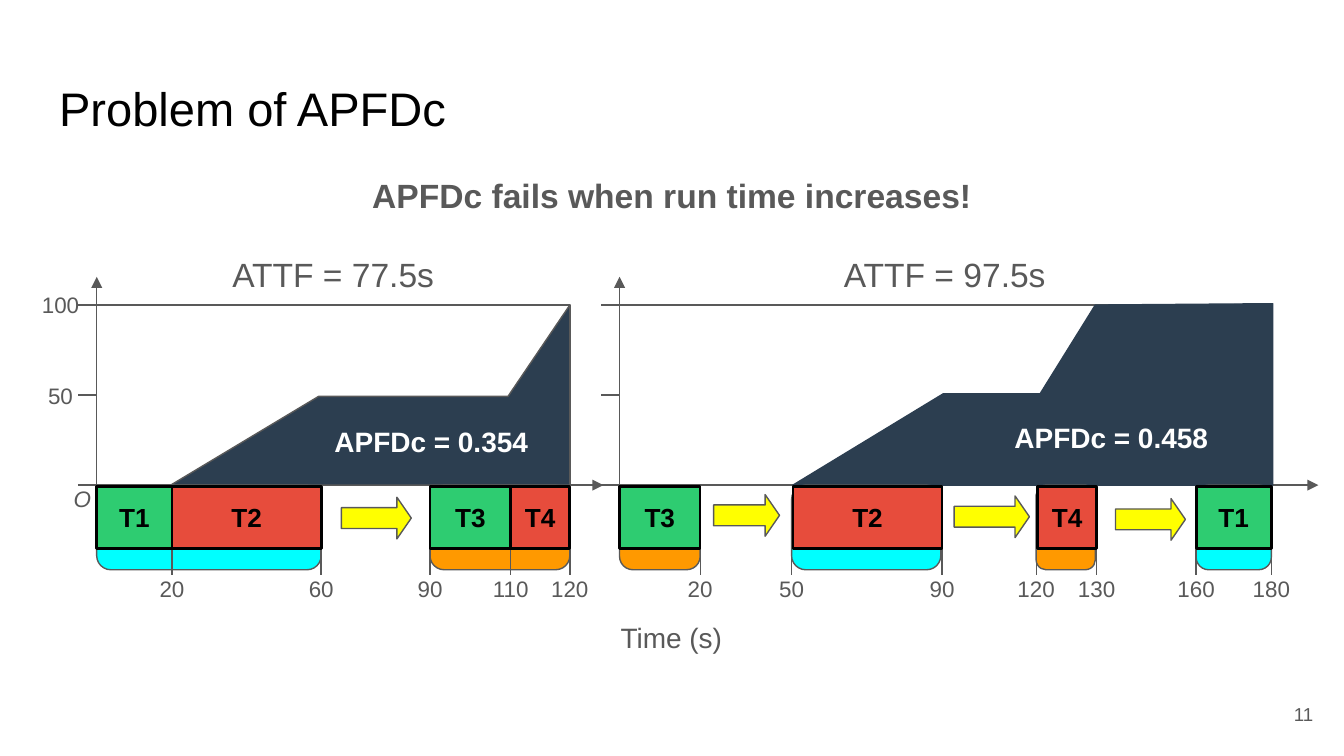
from dataclasses import dataclass

from lxml.etree import SubElement
from pptx import Presentation
from pptx.dml.color import RGBColor
from pptx.enum.shapes import MSO_CONNECTOR as Connector, MSO_SHAPE as Preset
from pptx.enum.text import MSO_ANCHOR as Anchor, MSO_AUTO_SIZE as AutoSize, PP_ALIGN as Align
from pptx.oxml.ns import qn
from pptx.util import Emu, Pt

SCALE = 9144


@dataclass(frozen=True)
class Theme:
    """Colours, type sizes and line widths of the slide."""
    font: str = "Arial"
    ink: str = "000000"
    grey: str = "595959"
    white: str = "FFFFFF"
    green: str = "2ECC71"
    red: str = "E74C3C"
    cyan: str = "00FFFF"
    orange: str = "FF9900"
    yellow: str = "FFFF00"
    navy: str = "2C3E50"
    title: float = 25.2
    heading: float = 18
    caption: float = 15
    test: float = 14
    tick: float = 12
    number: float = 10
    thin: float = 0.75
    thick: float = 1.5


THEME = Theme()
TEST_STYLES = {
    "T1": (56, THEME.green),
    "T2": (111, THEME.red),
    "T3": (60, THEME.green),
    "T4": (44, THEME.red),
}


@dataclass(frozen=True)
class Run:
    """One test order, with lengths measured from the origin of its plot."""
    attf: str
    apfdc: str
    apfdc_at: tuple
    axis_overrun: int
    tests: tuple
    faults: tuple
    ticks: tuple
    pauses: tuple
    area: tuple
    area_line: str


SHORT_RUN = Run(
    attf="ATTF = 77.5s", apfdc="APFDc = 0.354", apfdc_at=(167, 79), axis_overrun=25,
    tests=(("T1", 0), ("T2", 56), ("T3", 248), ("T4", 308)),
    faults=((0, 167, THEME.cyan), (248, 104, THEME.orange)),
    ticks=((56, "20"), (167, "60"), (248, "90"), (308, "110"), (352, "120")),
    pauses=((182, 9, 52),),
    area=((55, 0), (165, -66), (306, -66), (352, -134), (352, 0)),
    area_line=THEME.grey,
)
LONG_RUN = Run(
    attf="ATTF = 97.5s", apfdc="APFDc = 0.458", apfdc_at=(284, 76), axis_overrun=35,
    tests=(("T3", 0), ("T2", 129), ("T4", 311), ("T1", 429)),
    faults=((0, 60, THEME.orange), (128, 111, THEME.cyan),
            (310, 44, THEME.orange), (429, 56, THEME.cyan)),
    ticks=((60, "20"), (128, "50"), (240, "90"), (310, "120"),
           (355, "130"), (429, "160"), (485, "180")),
    pauses=((70, 7, 49), (249, 8, 56), (369, 10, 52)),
    area=((129, 0), (486, 0), (486, -135), (354, -134), (313, -68), (241, -68)),
    area_line=THEME.navy,
)


def px(*lengths):
    """Turn px lengths into EMU."""
    return [Emu(length * SCALE) for length in lengths]


def write(shape, text, size, color, align=Align.CENTER, anchor=Anchor.TOP, bold=False, italic=False):
    """Write one formatted run into a shape."""
    frame = shape.text_frame
    frame.word_wrap = True
    frame.vertical_anchor = anchor
    frame.margin_left, frame.margin_right, frame.margin_top, frame.margin_bottom = px(10, 10, 10, 10)
    paragraph = frame.paragraphs[0]
    paragraph.alignment = align
    run = paragraph.add_run()
    run.text = text
    font = run.font
    font.name, font.size, font.bold, font.italic = THEME.font, Pt(size), bold, italic
    font.color.rgb = RGBColor.from_string(color)


def add_label(slide, box, text, size, color=THEME.grey, **style):
    """Add a text box."""
    label = slide.shapes.add_textbox(*px(*box))
    write(label, text, size, color, **style)


def paint(shape, fill, line=THEME.grey, width=THEME.thin):
    """Set the fill and outline of a shape and drop its shadow."""
    shape.shadow.inherit = False
    shape.fill.solid()
    shape.fill.fore_color.rgb = RGBColor.from_string(fill)
    shape.line.color.rgb = RGBColor.from_string(line)
    shape.line.width = Pt(width)
    return shape


def add_block(slide, preset, box, fill, **outline):
    """Add a painted preset shape."""
    return paint(slide.shapes.add_shape(preset, *px(*box)), fill, **outline)


def add_line(slide, start, end, arrow=False):
    """Add a thin straight line, with an arrowhead at its end if wanted."""
    line = slide.shapes.add_connector(Connector.STRAIGHT, *px(*start, *end))
    line.line.color.rgb = RGBColor.from_string(THEME.grey)
    line.line.width = Pt(THEME.thin)
    properties = line.element.spPr
    if arrow:
        SubElement(properties.find(qn("a:ln")), qn("a:tailEnd"), type="triangle")
    SubElement(properties, qn("a:effectLst"))
    return line


def add_header(slide, box):
    """Fill the title and add the statement below it."""
    left, top, width, height = box
    title = slide.shapes.title
    title.left, title.top, title.width, title.height = px(left, top, width, height)
    title.text_frame.auto_size = AutoSize.NONE
    write(title, "Problem of APFDc", THEME.title, THEME.ink, align=Align.LEFT)
    add_label(slide, (left + 173, top + 71, 586, 50), "APFDc fails when run time increases!",
              THEME.heading, bold=True)


def add_plot(slide, box, run):
    """Draw the axes, the detection area and the captions of a run."""
    left, top, width, height = box
    base = top + height
    add_line(slide, (left, base + 31), (left, top - 21), arrow=True)
    add_line(slide, (left - 14, base), (left + width + run.axis_overrun, base), arrow=True)
    plot = add_block(slide, Preset.RECTANGLE, box, THEME.white)
    add_line(slide, (left, top), (left - 14, top))
    middle = top + height // 2
    add_line(slide, (left, middle), (left - 14, middle)).begin_connect(plot, 1)
    builder = slide.shapes.build_freeform(*run.area[0], scale=SCALE)
    builder.add_line_segments(run.area[1:], close=True)
    paint(builder.convert_to_shape(*px(left, base)), THEME.navy, line=run.area_line)
    add_label(slide, (left + width // 2 - 100, top - 48, 200, 50), run.attf, THEME.heading)
    across, down = run.apfdc_at
    add_label(slide, (left + across, top + down, 176, 45), run.apfdc, THEME.caption,
              THEME.white, align=Align.LEFT, bold=True)


def add_timeline(slide, left, base, run):
    """Draw the tests, faults, pauses and time labels below a plot."""
    for offset, width, color in run.faults:
        add_block(slide, Preset.ROUNDED_RECTANGLE, (left + offset, base, width, 63), color)
    for offset, text in run.ticks:
        x = left + offset
        add_line(slide, (x, base + 46), (x, base + 67))
        add_label(slide, (x - 25, base + 57, 50, 40), text, THEME.tick)
    for name, offset in run.tests:
        width, color = TEST_STYLES[name]
        test = add_block(slide, Preset.RECTANGLE, (left + offset, base + 1, width, 46), color,
                         line=THEME.ink, width=THEME.thick)
        write(test, name, THEME.test, THEME.ink, anchor=Anchor.MIDDLE, bold=True)
    for offset, drop, width in run.pauses:
        arrow = add_block(slide, Preset.RIGHT_ARROW, (left + offset, base + drop, width, 31), THEME.yellow)
        arrow.adjustments[1] = 0.345


def add_scale(slide, box):
    """Label the origin and the vertical axis of a plot."""
    left, top, _, height = box
    for text, y in (("100", top), ("50", top + height // 2)):
        add_label(slide, (left - 53, y - 20, 52, 40), text, THEME.tick)
    add_label(slide, (left - 27, top + height - 10, 34, 40), "O", THEME.tick,
              align=Align.LEFT, italic=True)


def main():
    """Build and save the slide."""
    presentation = Presentation()
    presentation.slide_width, = px(1000)
    presentation.slide_height = Emu(presentation.slide_width * 9 // 16)
    slide = presentation.slides.add_slide(presentation.slide_layouts[5])
    add_header(slide, (34, 49, 932, 63))
    short_box, long_box = (72, 227, 352, 134), (461, 227, 485, 134)
    for box, run in ((short_box, SHORT_RUN), (long_box, LONG_RUN)):
        add_plot(slide, box, run)
        add_timeline(slide, box[0], box[1] + box[3], run)
    add_scale(slide, short_box)
    add_label(slide, (437, 452, 125, 45), "Time (s)", THEME.caption, anchor=Anchor.MIDDLE)
    add_label(slide, (927, 510, 60, 43), "11", THEME.number, align=Align.RIGHT, anchor=Anchor.MIDDLE)
    presentation.save("out.pptx")


if __name__ == "__main__":
    main()
